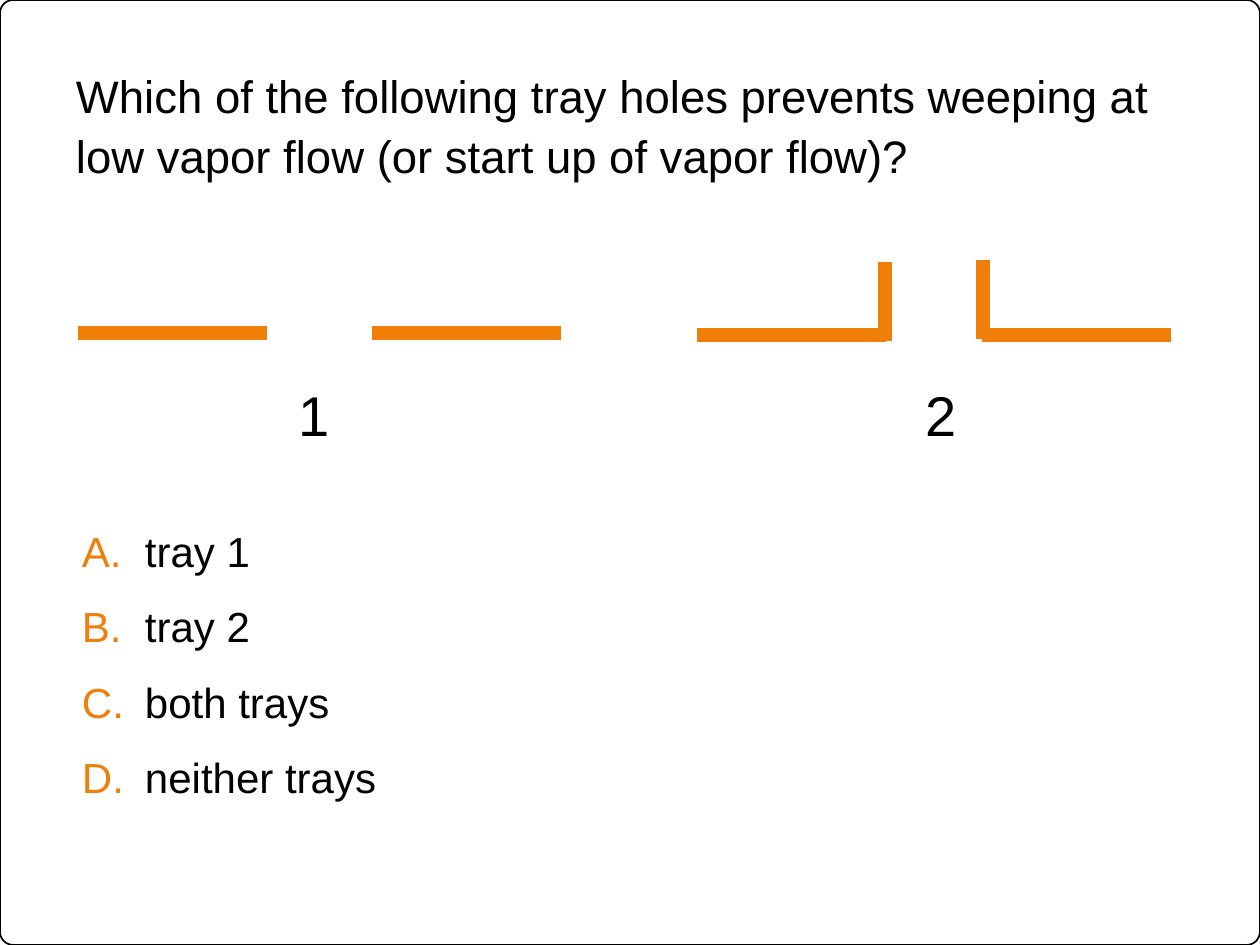
"""Build a quiz slide that compares two kinds of tray hole."""
from lxml import etree
from pptx import Presentation
from pptx import util as u
from pptx.dml.color import RGBColor
from pptx.enum import shapes, text
from pptx.oxml.ns import qn

BLACK = RGBColor(0x00, 0x00, 0x00)
ORANGE = RGBColor(0xF0, 0x7F, 0x09)
PX = 914400 // 126
WIDE, HIGH = 1260, 945

ASK = ("Which of the following tray holes prevents weeping at low vapor flow "
       "(or start up of vapor flow)?")
PICKS = ["tray 1", "tray 2", "both trays", "neither trays"]
FLOOR = 189
PLATES = [(78, 333), (372, 333), (982, 335), (697, 335)]
LIPS = [(885, 341), (983, 339)]
LIP = 79
TAGS = [("1", 281), ("2", 908)]


def px(*nums):
    return [u.Emu(n * PX) for n in nums]


def put(obj, **vals):
    for key, val in vals.items():
        setattr(obj, key, val)


def place(box, *rect):
    put(box, **dict(zip(("left", "top", "width", "height"), px(*rect))))


def write(par, words, size, **vals):
    par.text = words
    put(par, **vals)
    put(par.font, name="Arial", size=u.Pt(size))
    par.font.color.rgb = BLACK


def letter(par):
    props = par._p.get_or_add_pPr()
    indent = px(63)[0]
    props.set("marL", str(indent))
    props.set("indent", str(-indent))
    tint = etree.SubElement(props, qn("a:buClr"))
    etree.SubElement(tint, qn("a:srgbClr"), val=str(ORANGE))
    etree.SubElement(props, qn("a:buFont"), typeface="Arial")
    etree.SubElement(props, qn("a:buAutoNum"), type="alphaUcPeriod")


def bar(slide, *ends):
    line = slide.shapes.add_connector(shapes.MSO_CONNECTOR.STRAIGHT, *px(*ends))
    line.line.color.rgb = ORANGE
    line.line.width = u.Pt(8)
    etree.SubElement(line._element.spPr, qn("a:effectLst"))


def main():
    deck = Presentation()
    put(deck, slide_width=px(WIDE)[0], slide_height=px(HIGH)[0])
    slide = deck.slides.add_slide(deck.slide_layouts[1])
    title, body = slide.placeholders

    frame = slide.shapes.add_shape(
        shapes.MSO_SHAPE.ROUNDED_RECTANGLE, *px(0, 0, WIDE, HIGH))
    frame.adjustments[0] = 0.014
    frame.shadow.inherit = False
    frame.fill.background()
    frame.line.color.rgb = BLACK
    frame.line.width = u.Pt(1)
    tree = slide.shapes._spTree
    tree.remove(frame._element)
    tree.insert(2, frame._element)

    place(title, 76, 63, 1108, 315)
    place(body, 82, 500, 651, 352)
    for box in (title, body):
        put(box.text_frame, margin_left=0, margin_top=0, margin_right=0,
            margin_bottom=0, word_wrap=True, auto_size=text.MSO_AUTO_SIZE.NONE,
            vertical_anchor=text.MSO_ANCHOR.TOP)

    write(title.text_frame.paragraphs[0], ASK, 26, line_spacing=1.1,
          alignment=text.PP_ALIGN.LEFT)
    for i, pick in enumerate(PICKS):
        pars = body.text_frame
        par = pars.add_paragraph() if i else pars.paragraphs[0]
        letter(par)
        write(par, pick, 24, line_spacing=1.5, space_before=u.Pt(0))

    for x, y in PLATES:
        bar(slide, x, y, x + FLOOR, y)
    for x, y in LIPS:
        bar(slide, x, y, x, y - LIP)
    for tag, x in TAGS:
        box = slide.shapes.add_textbox(*px(x, 374, 66, 81))
        put(box.text_frame, word_wrap=True,
            auto_size=text.MSO_AUTO_SIZE.SHAPE_TO_FIT_TEXT)
        write(box.text_frame.paragraphs[0], tag, 32,
              alignment=text.PP_ALIGN.CENTER)

    deck.save("out.pptx")


if __name__ == "__main__":
    main()
